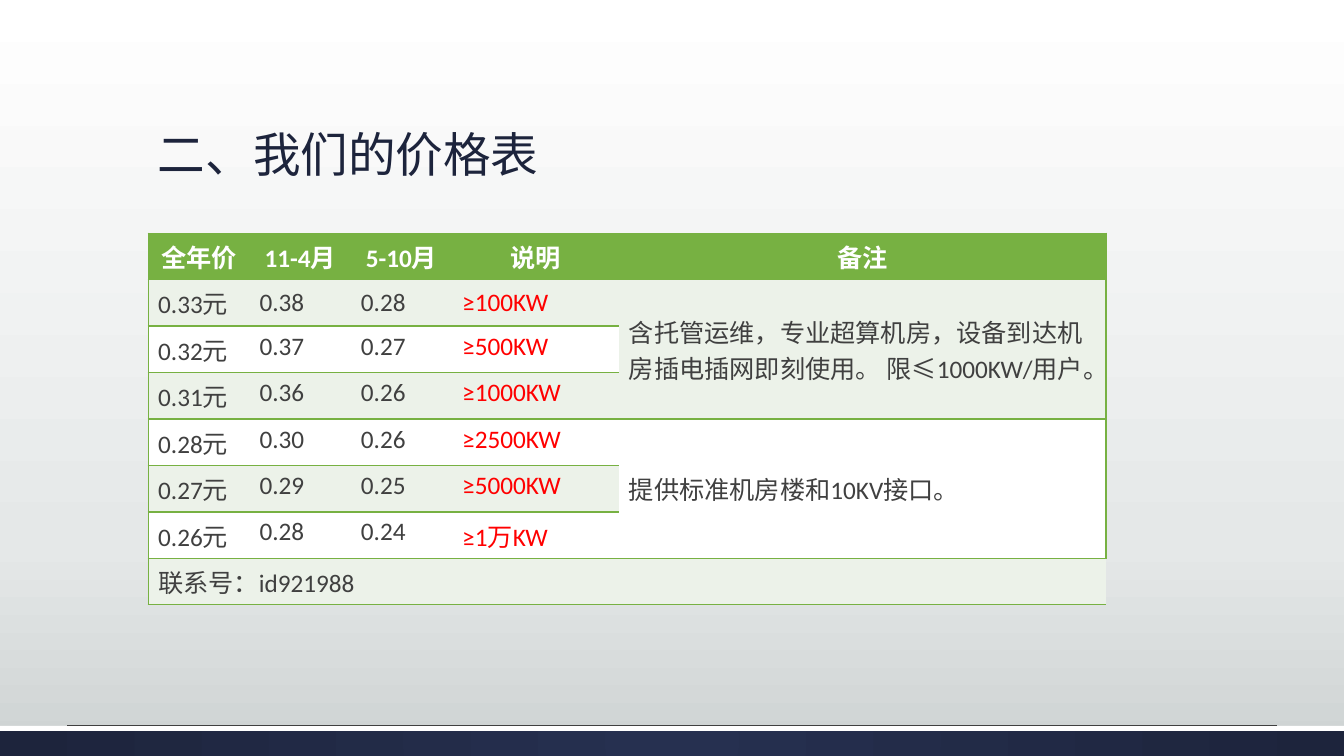
"""Build the price table slide."""
from dataclasses import dataclass

from pptx import Presentation
from pptx.dml.color import RGBColor
from pptx.enum.shapes import MSO_CONNECTOR, MSO_SHAPE
from pptx.enum.text import MSO_ANCHOR, PP_ALIGN
from pptx.oxml import parse_xml
from pptx.oxml.ns import nsdecls, qn
from pptx.util import Pt


@dataclass(frozen=True)
class Theme:
    navy: str = "1D243C"
    navy_light: str = "263050"
    green: str = "77B142"
    band: str = "ECF2E9"
    white: str = "FFFFFF"
    text: str = "404040"
    red: str = "FF0000"
    title_size: int = 34
    table_size: int = 18
    latin: str = "Calibri"
    cjk: str = "Noto Sans CJK SC"


THEME = Theme()
BACKDROP = [(0, "FFFFFF"), (72, "E5E8E8"), (100, "CDD2D2")]
HEADERS = ["全年价", "11-4月", "5-10月", "说明", "备注"]
PRICES = [
    ["0.33元", "0.38", "0.28", "≥100KW"],
    ["0.32元", "0.37", "0.27", "≥500KW"],
    ["0.31元", "0.36", "0.26", "≥1000KW"],
    ["0.28元", "0.30", "0.26", "≥2500KW"],
    ["0.27元", "0.29", "0.25", "≥5000KW"],
    ["0.26元", "0.28", "0.24", "≥1万KW"],
]
REMARKS = {
    1: "含托管运维，专业超算机房，设备到达机房插电插网即刻使用。 限≤1000KW/用户。",
    4: "提供标准机房楼和10KV接口。",
}
CONTACT = "联系号：id921988"
COL_WIDTHS = [72.4, 72.4, 72.4, 119, 348]
ROW_HEIGHT = 33.2
REMARK_ROWS = 3


def rgb(color):
    """Return a colour object for a hex string."""
    return RGBColor.from_string(color)


def write(tf, text, *, size, color, font=THEME.latin, bold=False,
          align=PP_ALIGN.LEFT, anchor=MSO_ANCHOR.TOP, spacing=None):
    """Write one formatted paragraph into a text frame."""
    tf.word_wrap = True
    tf.vertical_anchor = anchor
    p = tf.paragraphs[0]
    p.alignment = align
    p.line_spacing = spacing
    r = p.add_run()
    r.text = text
    r.font.size, r.font.bold, r.font.name = Pt(size), bold, font
    r.font.color.rgb = rgb(color)
    r.font._element.append(parse_xml(
        f'<a:ea {nsdecls("a")} typeface="{THEME.cjk}"/>'))


def set_gradient(props, stops, direction):
    """Replace the solid fill in a property element with a gradient."""
    marks = "".join(f'<a:gs pos="{pos * 1000}"><a:srgbClr val="{color}"/></a:gs>'
                    for pos, color in stops)
    props.replace(props.find(qn("a:solidFill")), parse_xml(
        f'<a:gradFill {nsdecls("a")} rotWithShape="1"><a:gsLst>{marks}</a:gsLst>'
        f'{direction}</a:gradFill>'))


def add_backdrop(s):
    """Fill the slide background with a vertical gradient."""
    s.background.fill.solid()
    set_gradient(s._element.cSld.bg.bgPr, BACKDROP,
                 '<a:lin ang="5400000" scaled="0"/>')


def add_bar(s, top, width, height, color):
    """Add a plain bar from the left edge of the slide."""
    sp = s.shapes.add_shape(MSO_SHAPE.RECTANGLE, 0, Pt(top), width, Pt(height))
    sp.shadow.inherit = False
    sp.fill.solid()
    sp.fill.fore_color.rgb = rgb(color)
    sp.line.fill.background()
    return sp


def add_rule(s, left, right, top):
    """Add a thin horizontal line."""
    line = s.shapes.add_connector(MSO_CONNECTOR.STRAIGHT,
                                  Pt(left), Pt(top), Pt(right), Pt(top))
    line.line.width = Pt(0.75)
    line.line.color.rgb = rgb(THEME.text)
    line._element.spPr.append(parse_xml(f'<a:effectLst {nsdecls("a")}/>'))


def add_footer(s, width):
    """Add the navy footer with its white edge and thin rule."""
    bar = add_bar(s, 518.4, width, 21.6, THEME.navy)
    set_gradient(bar._element.spPr, [(0, THEME.navy_light), (100, THEME.navy)],
                 '<a:path path="circle"><a:fillToRect l="50000" t="50000" '
                 'r="50000" b="50000"/></a:path>')
    add_bar(s, 518.4, width, 3.6, THEME.white)
    add_rule(s, 48, 912, 518)


def add_title(s, text):
    """Add the slide title."""
    sp = s.shapes.add_textbox(Pt(105.8), Pt(36.7), Pt(748.8), Pt(97.2))
    write(sp.text_frame, text, size=THEME.title_size, color=THEME.navy,
          font=THEME.cjk, anchor=MSO_ANCHOR.BOTTOM, spacing=0.9)


def style_cell(cell, fill, edges):
    """Set the fill of a cell and draw the listed edges in green."""
    tcPr = cell._tc.get_or_add_tcPr()
    for edge in "LRTB":
        paint = (f'<a:solidFill><a:srgbClr val="{THEME.green}"/></a:solidFill>'
                 if edge in edges else "<a:noFill/>")
        tcPr.append(parse_xml(
            f'<a:ln{edge} {nsdecls("a")} w="12700">{paint}</a:ln{edge}>'))
    cell.fill.solid()
    cell.fill.fore_color.rgb = rgb(fill)


def write_cell(cell, text, color=THEME.text, **fmt):
    """Write table text into a cell."""
    write(cell.text_frame, text, size=THEME.table_size, color=color, **fmt)
    cell.vertical_anchor = fmt.get("anchor", MSO_ANCHOR.TOP)


def style_grid(table, last_row, last_col):
    """Apply banding and borders, leaving merged remarks undivided."""
    def ruled(row, col):
        return col < last_col or row % REMARK_ROWS == 0 or row == last_row

    for row in range(last_row + 1):
        for col in range(last_col + 1):
            edges = [edge for edge, shown in (
                ("L", col == 0), ("R", col == last_col),
                ("T", row == 0 or ruled(row - 1, col)),
                ("B", ruled(row, col))) if shown]
            fill = THEME.band if row % 2 else THEME.white
            if col == last_col and 0 < row < last_row:
                fill = THEME.band if row <= REMARK_ROWS else THEME.white
            style_cell(table.cell(row, col), fill if row else THEME.green, edges)


def add_price_table(s):
    """Add the price table with merged remarks and contact row."""
    last_row, last_col = len(PRICES) + 1, len(HEADERS) - 1
    table = s.shapes.add_table(
        last_row + 1, last_col + 1, Pt(105.8), Pt(166.5),
        Pt(sum(COL_WIDTHS)), Pt(ROW_HEIGHT * (last_row + 1))).table
    for column, width in zip(table.columns, COL_WIDTHS):
        column.width = Pt(width)
    for row in table.rows:
        row.height = Pt(ROW_HEIGHT)
    style_grid(table, last_row, last_col)
    for col, text in enumerate(HEADERS):
        write_cell(table.cell(0, col), text, THEME.white, bold=True,
                   align=PP_ALIGN.CENTER)
    for row, prices in enumerate(PRICES, 1):
        for col, text in enumerate(prices):
            write_cell(table.cell(row, col), text,
                       THEME.red if text.startswith("≥") else THEME.text,
                       anchor=MSO_ANCHOR.MIDDLE if row == 1 else MSO_ANCHOR.TOP)
    for row, text in REMARKS.items():
        cell = table.cell(row, last_col)
        cell.merge(table.cell(row + REMARK_ROWS - 1, last_col))
        write_cell(cell, text, anchor=MSO_ANCHOR.MIDDLE)
    contact = table.cell(last_row, 0)
    contact.merge(table.cell(last_row, last_col))
    write_cell(contact, CONTACT)


def main():
    """Build and save the slide."""
    prs = Presentation()
    prs.slide_width, prs.slide_height = Pt(960), Pt(540)
    s = prs.slides.add_slide(prs.slide_layouts[6])
    add_backdrop(s)
    add_footer(s, prs.slide_width)
    add_title(s, "二、我们的价格表")
    add_price_table(s)
    prs.save("out.pptx")


if __name__ == "__main__":
    main()
